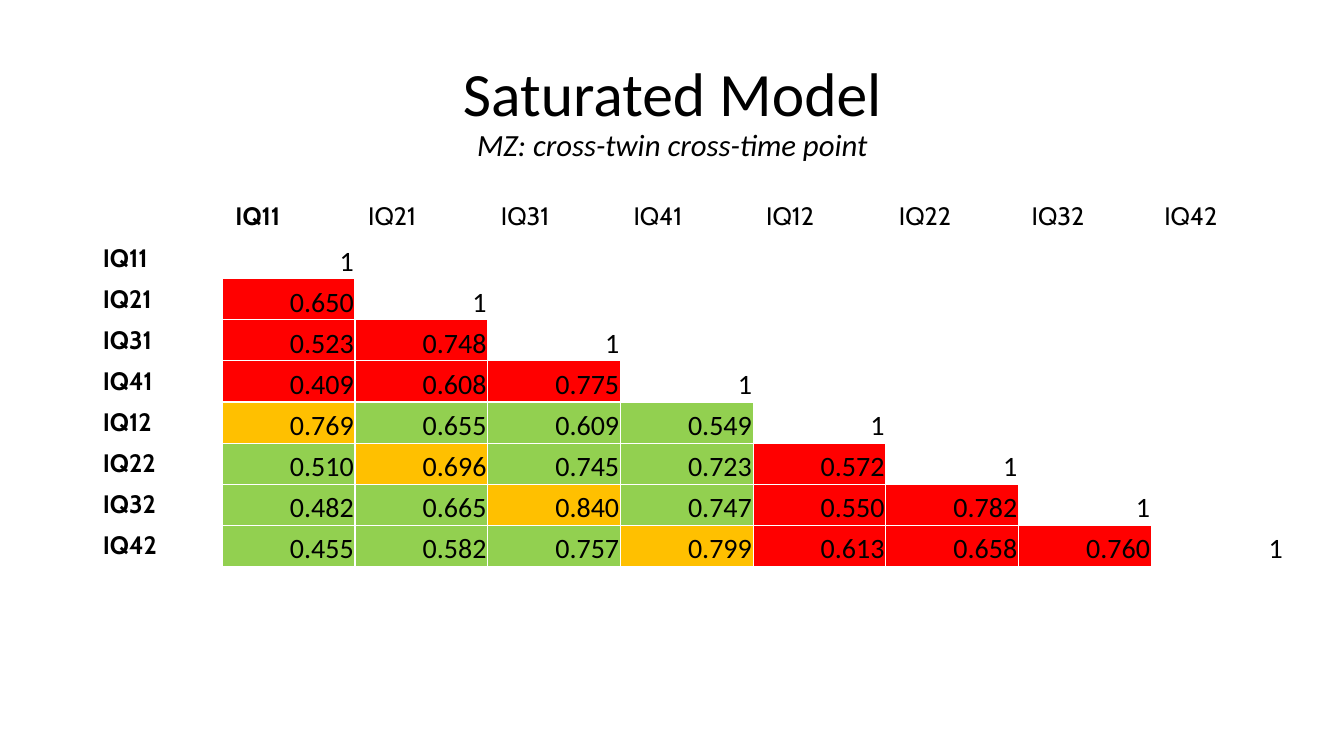
from lxml.etree import SubElement
from pptx import Presentation
from pptx.dml.color import RGBColor
from pptx.enum.text import MSO_ANCHOR, MSO_AUTO_SIZE, PP_ALIGN
from pptx.oxml.ns import qn
from pptx.util import Cm, Pt

COLOURS = {
    "text": "000000",
    "border": "FFFFFF",
    "within twin": "FF0000",
    "same time": "FFC000",
    "cross time": "92D050",
}
TITLE_BOX = (2.34, 1.01, 29.21, 3.68)
TABLE_BOX = (2.26, 4.95, 30.1, 9.27)
TITLE_FONT = {"name": "Calibri", "size": Pt(44), "italic": False}
SUBTITLE_FONT = {"name": "Calibri", "size": Pt(22), "italic": True}
LABEL_FONT = {"name": "Cabin", "size": Pt(18), "bold": False}
BOLD_LABEL_FONT = {**LABEL_FONT, "bold": True}
VALUE_FONT = {"name": "Calibri", "size": Pt(20), "bold": False}
LABEL_CELL = {
    "margin_left": Cm(0.33),
    "margin_right": Cm(0.33),
    "margin_top": Cm(0.13),
    "margin_bottom": Cm(0.13),
    "vertical_anchor": MSO_ANCHOR.TOP,
}
VALUE_CELL = {
    "margin_left": Cm(0.03),
    "margin_right": Cm(0.03),
    "margin_top": Cm(0.03),
    "margin_bottom": Cm(0),
    "vertical_anchor": MSO_ANCHOR.BOTTOM,
}
VARIABLES = ["IQ11", "IQ21", "IQ31", "IQ41", "IQ12", "IQ22", "IQ32", "IQ42"]
TIME_POINTS = 4
CORRELATIONS = [
    ["1"],
    ["0.650", "1"],
    ["0.523", "0.748", "1"],
    ["0.409", "0.608", "0.775", "1"],
    ["0.769", "0.655", "0.609", "0.549", "1"],
    ["0.510", "0.696", "0.745", "0.723", "0.572", "1"],
    ["0.482", "0.665", "0.840", "0.747", "0.550", "0.782", "1"],
    ["0.455", "0.582", "0.757", "0.799", "0.613", "0.658", "0.760", "1"],
]


def apply_format(target, values):
    for name, value in values.items():
        setattr(target, name, value)


def add_span(para, text, font):
    span = para.add_run()
    span.text = text
    apply_format(span.font, font)
    span.font.color.rgb = RGBColor.from_string(COLOURS["text"])


def place_title(page, box):
    title = page.shapes.title
    apply_format(title, dict(zip(("left", "top", "width", "height"), map(Cm, box))))
    frame = title.text_frame
    apply_format(frame, {
        "word_wrap": True,
        "auto_size": MSO_AUTO_SIZE.NONE,
        "vertical_anchor": MSO_ANCHOR.MIDDLE,
    })
    para = frame.paragraphs[0]
    apply_format(para, {"alignment": PP_ALIGN.CENTER, "line_spacing": 0.9})
    add_span(para, "Saturated Model", TITLE_FONT)
    para.add_line_break()
    add_span(para, "MZ: cross-twin cross-time point", SUBTITLE_FONT)


def set_borders(cell, bottom_width):
    properties = cell._tc.get_or_add_tcPr()
    widths = {"a:lnL": 1, "a:lnR": 1, "a:lnT": 1, "a:lnB": bottom_width}
    for tag, width in widths.items():
        line = SubElement(properties, qn(tag), w=str(Pt(width)))
        fill = SubElement(line, qn("a:solidFill"))
        SubElement(fill, qn("a:srgbClr"), val=COLOURS["border"])


def correlation_kind(row, column):
    if row // TIME_POINTS == column // TIME_POINTS:
        return "within twin"
    if row % TIME_POINTS == column % TIME_POINTS:
        return "same time"
    return "cross time"


def fill_label(cell, text, font):
    apply_format(cell, LABEL_CELL)
    add_span(cell.text_frame.paragraphs[0], text, font)


def fill_value(cell, row, column):
    apply_format(cell, VALUE_CELL)
    para = cell.text_frame.paragraphs[0]
    para.alignment = PP_ALIGN.RIGHT
    add_span(para, CORRELATIONS[row][column], VALUE_FONT)
    if column < row:
        cell.fill.solid()
        colour = COLOURS[correlation_kind(row, column)]
        cell.fill.fore_color.rgb = RGBColor.from_string(colour)


def place_correlations(page, box):
    left, top, width, height = map(Cm, box)
    count = len(VARIABLES) + 1
    table = page.shapes.add_table(count, count, left, top, width, height).table
    apply_format(table, {"first_row": False, "horz_banding": False})
    for row in range(count):
        for column in range(count):
            cell = table.cell(row, column)
            set_borders(cell, 1 if row else 3)
            cell.fill.background()
            if row == 0 and column > 0:
                font = BOLD_LABEL_FONT if column == 1 else LABEL_FONT
                fill_label(cell, VARIABLES[column - 1], font)
            elif column == 0 and row > 0:
                fill_label(cell, VARIABLES[row - 1], BOLD_LABEL_FONT)
            elif 0 < column <= row:
                fill_value(cell, row - 1, column - 1)


def main():
    deck = Presentation()
    apply_format(deck, {"slide_width": Cm(33.87), "slide_height": Cm(19.05)})
    page = deck.slides.add_slide(deck.slide_layouts[5])
    place_title(page, TITLE_BOX)
    place_correlations(page, TABLE_BOX)
    deck.save("out.pptx")


if __name__ == "__main__":
    main()
